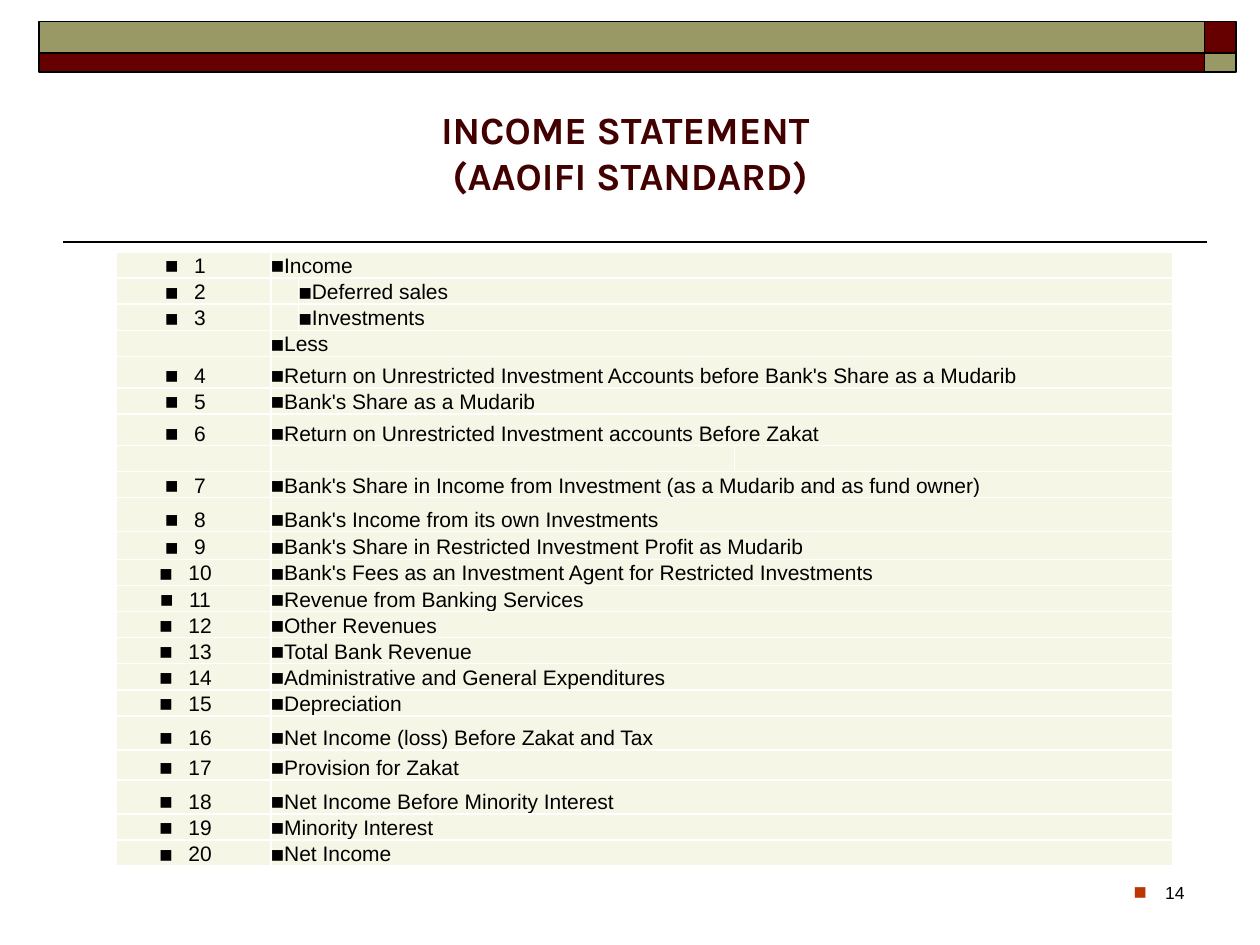
from lxml import etree
from pptx import Presentation
from pptx.dml.color import RGBColor
from pptx.enum.shapes import MSO_CONNECTOR, MSO_SHAPE
from pptx.enum.text import MSO_ANCHOR, PP_ALIGN
from pptx.oxml.ns import qn
from pptx.util import Inches, Pt

LEFT, CENTER, RIGHT = PP_ALIGN.LEFT, PP_ALIGN.CENTER, PP_ALIGN.RIGHT
MIDDLE, BOTTOM = MSO_ANCHOR.MIDDLE, MSO_ANCHOR.BOTTOM
RECT, LINE = MSO_SHAPE.RECTANGLE, MSO_CONNECTOR.STRAIGHT

BLACK, WHITE, MAROON, OLIVE = "000000", "FFFFFF", "660000", "999966"
CREAM, RUST, WINE = "F6F6E7", "BC3700", "420000"
COLS = [1.23, 0.22, 3.46, 3.48]
HIGH = 4.88
TALL = {4: 0.25, 6: 0.25, 9: 0.27, 10: 0.22, 17: 0.27, 18: 0.24, 19: 0.27}
ITEMS = [
    "Income",
    "Deferred sales",
    "Investments",
    "Less",
    "Return on Unrestricted Investment Accounts before Bank's Share as a Mudarib",
    "Bank's Share as a Mudarib",
    "Return on Unrestricted Investment accounts Before Zakat",
    "",
    "Bank's Share in Income from Investment (as a Mudarib and as fund owner)",
    "Bank's Income from its own Investments",
    "Bank's Share in Restricted Investment Profit as Mudarib",
    "Bank's Fees as an Investment Agent for Restricted Investments",
    "Revenue from Banking Services",
    "Other Revenues",
    "Total Bank Revenue",
    "Administrative and General Expenditures",
    "Depreciation",
    "Net Income (loss) Before Zakat and Tax",
    "Provision for Zakat",
    "Net Income Before Minority Interest",
    "Minority Interest",
    "Net Income",
]
INDENT = ("Deferred sales", "Investments")
PLAIN = ("Less", "")


def color(code):
    """Turn a hex string into a colour."""
    return RGBColor.from_string(code)


def node(root, tag, **attrs):
    """Add a drawing element below a root."""
    return etree.SubElement(root, qn("a:" + tag), attrs)


class Page:
    """Hold the style and the current slide."""

    def __init__(self, slide):
        """Keep the slide and the base text format."""
        self.slide = slide
        self.base = {"name": "Arial", "size": Pt(12), "bold": False}

    def style(self, para, align, tint=BLACK, **extra):
        """Format the runs of one paragraph."""
        para.alignment = align
        for run in para.runs:
            for key, value in {**self.base, **extra}.items():
                setattr(run.font, key, value)
            run.font.color.rgb = color(tint)

    def bullet(self, para, tint, margin=0, hang=0, scale=105):
        """Give a paragraph a square bullet."""
        props = para._p.get_or_add_pPr()
        for key, value in {"marL": margin, "indent": -hang}.items():
            props.set(key, str(Inches(value)))
        node(node(props, "spcBef"), "spcPct", val="20000")
        node(node(props, "buClr"), "srgbClr", val=tint)
        node(props, "buSzPct", val=str(scale * 1000))
        node(props, "buFont", typeface="Arial")
        node(props, "buChar", char="■")

    def bar(self, x, y, w, h, fill):
        """Draw one outlined block."""
        box = self.slide.shapes.add_shape(RECT, *map(Inches, (x, y, w, h)))
        box.shadow.inherit = False
        box.fill.solid()
        box.fill.fore_color.rgb = color(fill)
        box.line.color.rgb = color(BLACK)
        box.line.width = Pt(1)

    def rule(self, x, y, end):
        """Draw a level line."""
        line = self.slide.shapes.add_connector(LINE, *map(Inches, (x, y, end, y)))
        line.line.color.rgb = color(BLACK)
        line.line.width = Pt(1)
        node(line._element.spPr, "effectLst")

    def title(self, text, x, y, w, h):
        """Fill and place the title."""
        head = self.slide.shapes.title
        place = {"left": x, "top": y, "width": w, "height": h}
        for key, value in place.items():
            setattr(head, key, Inches(value))
        head.text_frame.text = text
        head.text_frame.vertical_anchor = MIDDLE
        self.style(head.text_frame.paragraphs[0], CENTER, WINE,
                   name="Karla", size=Pt(22), bold=True)

    def note(self, text, x, y, w, h):
        """Add the bulleted page number."""
        box = self.slide.shapes.add_textbox(*map(Inches, (x, y, w, h)))
        box.text_frame.word_wrap = True
        para = box.text_frame.paragraphs[0]
        para.text = text
        self.style(para, RIGHT, size=Pt(10))
        self.bullet(para, RUST, 0.25, 0.25, 125)

    def cell(self, cell, text="", number=False):
        """Fill and frame one table cell."""
        look = {"margin_left": 0, "margin_right": 0, "margin_top": 0,
                "margin_bottom": 0, "vertical_anchor": BOTTOM}
        for key, value in look.items():
            setattr(cell, key, value)
        for side in ("lnL", "lnR", "lnT", "lnB"):
            edge = node(cell._tc.tcPr, side, w=str(Pt(1)))
            node(node(edge, "solidFill"), "srgbClr", val=WHITE)
        cell.fill.solid()
        cell.fill.fore_color.rgb = color(CREAM)
        para = cell.text_frame.paragraphs[0]
        if text:
            para.text = text
            self.style(para, CENTER if number else LEFT)
            self.bullet(para, BLACK, *((0.1, 0.23) if number else ()))
        else:
            node(para._p, "endParaRPr", sz="1200")

    def table(self, x, y):
        """Build the numbered statement."""
        low = (HIGH - sum(TALL.values())) / (len(ITEMS) - len(TALL))
        rows = [TALL.get(i, low) for i in range(len(ITEMS))]
        size = map(Inches, (x, y, sum(COLS), HIGH))
        grid = self.slide.shapes.add_table(len(rows), len(COLS), *size).table
        grid.first_row = grid.horz_banding = False
        for col, width in zip(grid.columns, COLS):
            col.width = Inches(width)
        count = 0
        for r, (item, high) in enumerate(zip(ITEMS, rows)):
            grid.rows[r].height = Inches(high)
            start = 2 if item in INDENT else 1
            end = 3 if item else 2
            texts = {start: item}
            if item not in PLAIN:
                count += 1
                texts[0] = str(count)
            for c in range(len(COLS)):
                self.cell(grid.cell(r, c), texts.get(c, ""), c == 0)
            grid.cell(r, start).merge(grid.cell(r, end))


def main():
    """Build and save the slide."""
    deck = Presentation()
    deck.slide_width, deck.slide_height = Inches(10), Inches(7.5)
    page = Page(deck.slides.add_slide(deck.slide_layouts[5]))
    page.rule(0.5, 1.92, 9.58)
    for y, h, wide, small in ((0.17, 0.25, OLIVE, MAROON), (0.42, 0.15, MAROON, OLIVE)):
        page.bar(0.31, y, 9.25, h, wide)
        page.bar(9.56, y, 0.25, h, small)
    page.title("INCOME STATEMENT \v(AAOIFI STANDARD)", 0.5, 0.58, 9, 1.25)
    page.table(0.92, 2)
    page.note("14", 7.17, 6.95, 2.33, 0.4)
    deck.save("out.pptx")


if __name__ == "__main__":
    main()
